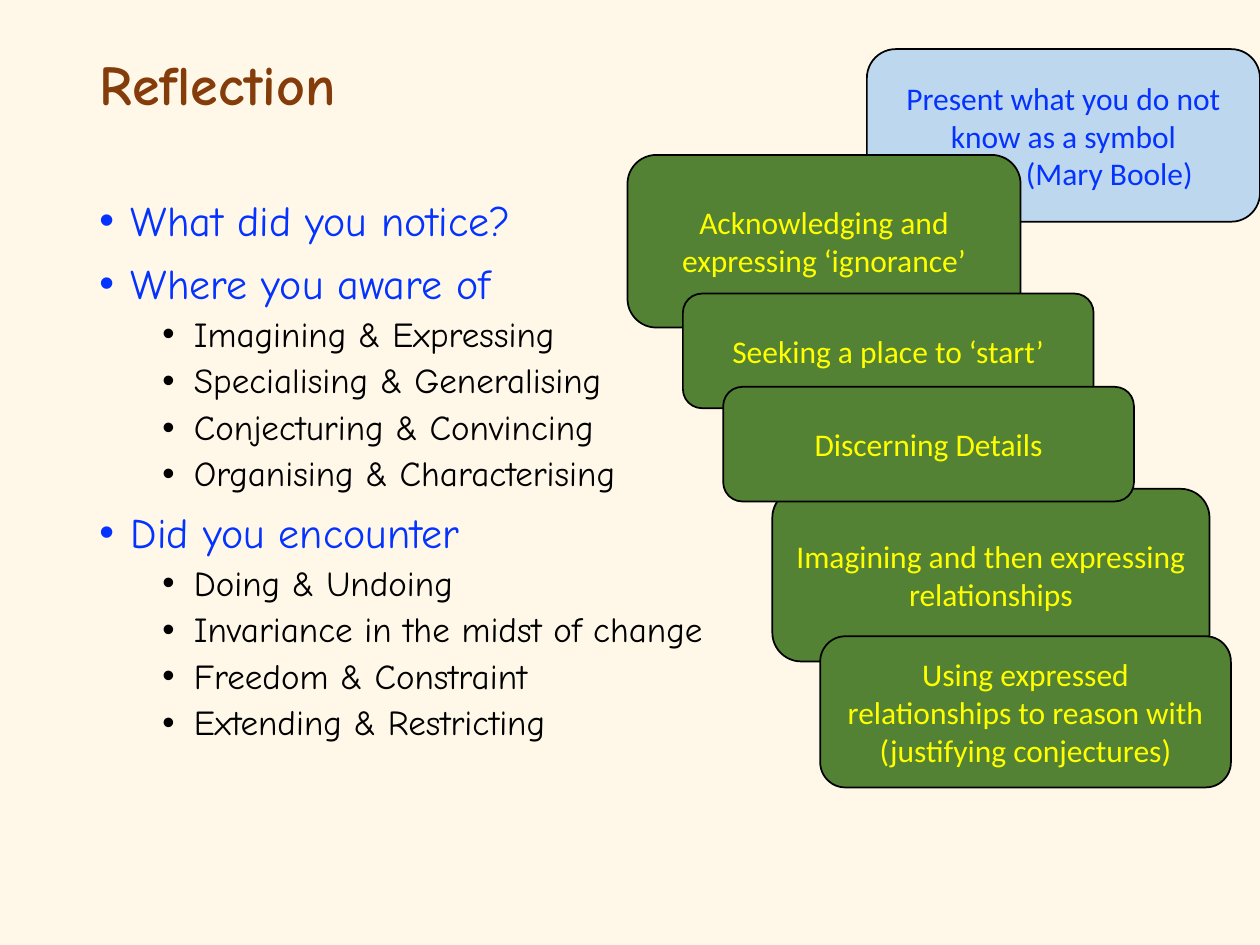
from lxml import etree
from pptx import Presentation
from pptx.dml.color import RGBColor
from pptx.enum.shapes import MSO_SHAPE
from pptx.enum.text import MSO_ANCHOR, PP_ALIGN
from pptx.oxml.ns import qn
from pptx.util import Inches, Pt

ROUNDED = MSO_SHAPE.ROUNDED_RECTANGLE
TOP, MIDDLE = MSO_ANCHOR.TOP, MSO_ANCHOR.MIDDLE
LEFT, CENTER = PP_ALIGN.LEFT, PP_ALIGN.CENTER

COLORS = {
    "cream": "FFF8E9",
    "brown": "843C0B",
    "blue": "0432FF",
    "black": "000000",
    "sky": "BDD7EE",
    "green": "548235",
    "yellow": "FFFF00",
}
HEADING_FONT, CARD_FONT = "Comic Neue", "Calibri"
COLUMNS, ROWS = 100, 75

QUESTIONS = [
    ("What did you notice?", []),
    ("Where you aware of", [
        "Imagining & Expressing",
        "Specialising & Generalising",
        "Conjecturing & Convincing",
        "Organising & Characterising",
    ]),
    ("Did you encounter", [
        "Doing & Undoing",
        "Invariance in the midst of change",
        "Freedom & Constraint",
        "Extending & Restricting",
    ]),
]

STEPS = [
    ((49.8, 12.3, 31.2, 13.7), ["Acknowledging and expressing ‘ignorance’"]),
    ((54.2, 23.3, 32.6, 9.1), ["Seeking a place to ‘start’"]),
    ((61.3, 38.8, 34.7, 13.7), ["Imagining and then expressing relationships"]),
    ((65.1, 50.5, 32.6, 12), ["Using expressed relationships to reason with",
                              "(justifying conjectures)"]),
    ((57.4, 30.7, 32.6, 9.1), ["Discerning Details"]),
]


class ReflectionSlide:
    def __init__(self, deck):
        self.slide = deck.slides.add_slide(deck.slide_layouts[6])
        self.column = deck.slide_width / COLUMNS
        self.row = deck.slide_height / ROWS
        backdrop = self.slide.background.fill
        backdrop.solid()
        backdrop.fore_color.rgb = self.color("cream")

    def color(self, name):
        return RGBColor.from_string(COLORS[name])

    def place(self, area):
        left, top, width, height = area
        return [int(left * self.column), int(top * self.row),
                int(width * self.column), int(height * self.row)]

    def set_lines(self, frame, lines, font, size, color, align=LEFT, bold=False):
        frame.word_wrap = True
        frame.text = "\n".join(lines)
        for paragraph in frame.paragraphs:
            paragraph.alignment = align
            self.style(paragraph, font, size, color, bold)

    def style(self, paragraph, font, size, color, bold=False):
        for run in paragraph.runs:
            run.font.name = font
            run.font.size = Pt(size)
            run.font.bold = bold
            run.font.color.rgb = self.color(color)

    def title(self, area, text):
        frame = self.slide.shapes.add_textbox(*self.place(area)).text_frame
        frame.vertical_anchor = TOP
        self.set_lines(frame, [text], HEADING_FONT, 32, "brown", bold=True)
        frame.paragraphs[0].line_spacing = 0.9

    def outline(self, area, questions):
        frame = self.slide.shapes.add_textbox(*self.place(area)).text_frame
        entries = []
        for question, themes in questions:
            entries.append((question, 0))
            entries.extend((theme, 1) for theme in themes)
        self.set_lines(frame, [text for text, _ in entries], HEADING_FONT, 24, "blue")
        for paragraph, (_, level) in zip(frame.paragraphs, entries):
            paragraph.level = level
            paragraph.line_spacing = 0.9
            paragraph.space_before = Pt(5 if level else 10)
            self.bullet(paragraph, 0.25 + 0.5 * level)
            if level:
                self.style(paragraph, HEADING_FONT, 20, "black")

    def bullet(self, paragraph, indent):
        properties = paragraph._p.get_or_add_pPr()
        properties.set("marL", str(Inches(indent)))
        properties.set("indent", str(Inches(-0.25)))
        etree.SubElement(properties, qn("a:buFont")).set("typeface", "Arial")
        etree.SubElement(properties, qn("a:buChar")).set("char", "•")

    def card(self, area, lines, fill="green", ink="yellow"):
        card = self.slide.shapes.add_shape(ROUNDED, *self.place(area))
        card.shadow.inherit = False
        card.fill.solid()
        card.fill.fore_color.rgb = self.color(fill)
        card.line.color.rgb = self.color("black")
        card.line.width = Pt(1)
        card.text_frame.vertical_anchor = MIDDLE
        self.set_lines(card.text_frame, lines, CARD_FONT, 18, ink, CENTER)
        return card


def main():
    deck = Presentation()
    deck.slide_width, deck.slide_height = Inches(10), Inches(7.5)
    page = ReflectionSlide(deck)
    quote = page.card((68.8, 3.9, 31.2, 13.7),
                      ["Present what you do not know as a symbol", "(Mary Boole)"],
                      "sky", "blue")
    attribution = quote.text_frame.paragraphs[1]
    attribution._p.get_or_add_pPr().set("marL", str(Inches(0.73)))
    page.title((6.9, 4, 86.2, 7.1), "Reflection")
    page.outline((6.9, 15.4, 86.2, 47.6), QUESTIONS)
    for area, lines in STEPS:
        page.card(area, lines)
    deck.save("out.pptx")


if __name__ == "__main__":
    main()
